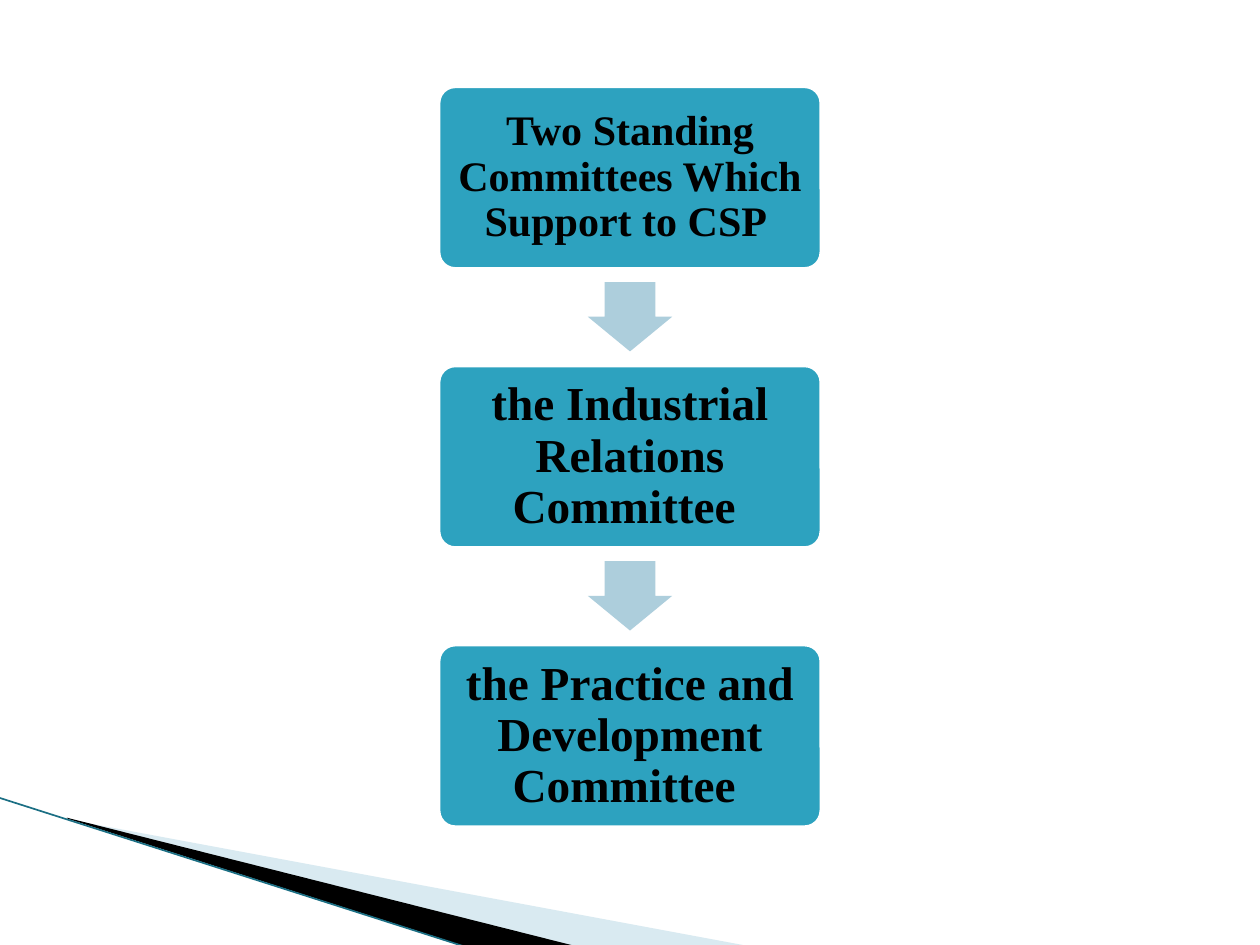
from dataclasses import dataclass

from lxml.etree import SubElement
from pptx import Presentation
from pptx.dml.color import RGBColor
from pptx.enum.shapes import MSO_CONNECTOR, MSO_SHAPE
from pptx.enum.text import MSO_ANCHOR, PP_ALIGN
from pptx.oxml.ns import qn
from pptx.util import Pt


@dataclass(frozen=True)
class Theme:
    """Colours, font and type sizes of the slide."""
    box: str = "2DA2BF"
    border: str = "FFFFFF"
    arrow: str = "ADCEDC"
    text: str = "000000"
    pale: str = "A0CBDC"
    dark: str = "000000"
    edge: str = "1B6F84"
    font: str = "Times New Roman"
    heading: float = 24
    body: float = 27


THEME = Theme()
CENTRE, TOP, PITCH = 360, 48.2, 159.5
BOX_W, BOX_H = 221, 106.6
ARROW_W, ARROW_H, ARROW_OFFSET = 39.6, 48.2, 108.7


def rgb(value):
    """Turn a hex string into a colour."""
    return RGBColor.from_string(value)


def paint(sp, fill, line=None, width=0):
    """Set fill and outline and drop the shadow."""
    sp.shadow.inherit = False
    sp.fill.solid()
    sp.fill.fore_color.rgb = rgb(fill)
    if line:
        sp.line.color.rgb = rgb(line)
        sp.line.width = Pt(width)
    else:
        sp.line.fill.background()


def write(sp, text, size, color=THEME.text, bold=True, inset=4.5):
    """Put one centred paragraph into a shape."""
    tf = sp.text_frame
    tf.word_wrap = True
    tf.vertical_anchor = MSO_ANCHOR.MIDDLE
    tf.margin_left = tf.margin_right = Pt(inset)
    tf.margin_top = tf.margin_bottom = Pt(inset)
    p = tf.paragraphs[0]
    p.alignment = PP_ALIGN.CENTER
    p.line_spacing = 0.9
    r = p.add_run()
    r.text = text
    r.font.name = THEME.font
    r.font.size = Pt(size)
    r.font.bold = bold
    r.font.color.rgb = rgb(color)


def add_box(s, top, text, size):
    """Add a rounded box with its label."""
    sp = s.shapes.add_shape(MSO_SHAPE.ROUNDED_RECTANGLE, Pt(CENTRE - BOX_W / 2),
                            Pt(top), Pt(BOX_W), Pt(BOX_H))
    sp.adjustments[0] = 0.1
    paint(sp, THEME.box, THEME.border, 4.33)
    write(sp, text, size)


def add_arrow(s, top):
    """Add a block arrow turned to point down."""
    sp = s.shapes.add_shape(MSO_SHAPE.RIGHT_ARROW, Pt(CENTRE - ARROW_W / 2),
                            Pt(top), Pt(ARROW_W), Pt(ARROW_H))
    sp.rotation = 90
    sp.adjustments[0], sp.adjustments[1] = 0.6, 0.5
    paint(sp, THEME.arrow)


def add_wedge(s, points, fill, opacity=100):
    """Add a filled corner wedge."""
    start, *rest = [(Pt(x), Pt(y)) for x, y in points]
    builder = s.shapes.build_freeform(*start)
    builder.add_line_segments(rest, close=True)
    sp = builder.convert_to_shape()
    paint(sp, fill)
    if opacity < 100:
        color = sp.fill._xPr.find(qn("a:solidFill"))[0]
        SubElement(color, qn("a:alpha")).set("val", str(opacity * 1000))


def add_edge(s, x1, y1, x2, y2):
    """Add the thin line along the corner wedge."""
    line = s.shapes.add_connector(MSO_CONNECTOR.STRAIGHT, Pt(x1), Pt(y1), Pt(x2), Pt(y2))
    line.line.color.rgb = rgb(THEME.edge)
    line.line.width = Pt(0.95)
    SubElement(line._element.spPr, qn("a:effectLst"))


def main():
    """Build and save the slide."""
    prs = Presentation()
    prs.slide_width, prs.slide_height = Pt(720), Pt(540)
    s = prs.slides.add_slide(prs.slide_layouts[6])

    add_wedge(s, [(39.6, 468.4), (428.4, 540.7), (328.3, 540.7), (39.6, 468)], THEME.pale, 40)
    add_wedge(s, [(38.2, 467.3), (329, 540.7), (267.8, 541.4), (38.9, 468)], THEME.dark)
    add_edge(s, -0.7, 455.8, 267.1, 541.4)

    steps = [
        ("Two Standing Committees Which Support to CSP ", THEME.heading),
        ("the Industrial Relations Committee ", THEME.body),
        ("the Practice and Development Committee ", THEME.body),
    ]
    for i, (text, size) in enumerate(steps):
        top = TOP + i * PITCH
        add_box(s, top, text, size)
        if i < len(steps) - 1:
            add_arrow(s, top + ARROW_OFFSET)

    prs.save("out.pptx")


if __name__ == "__main__":
    main()
